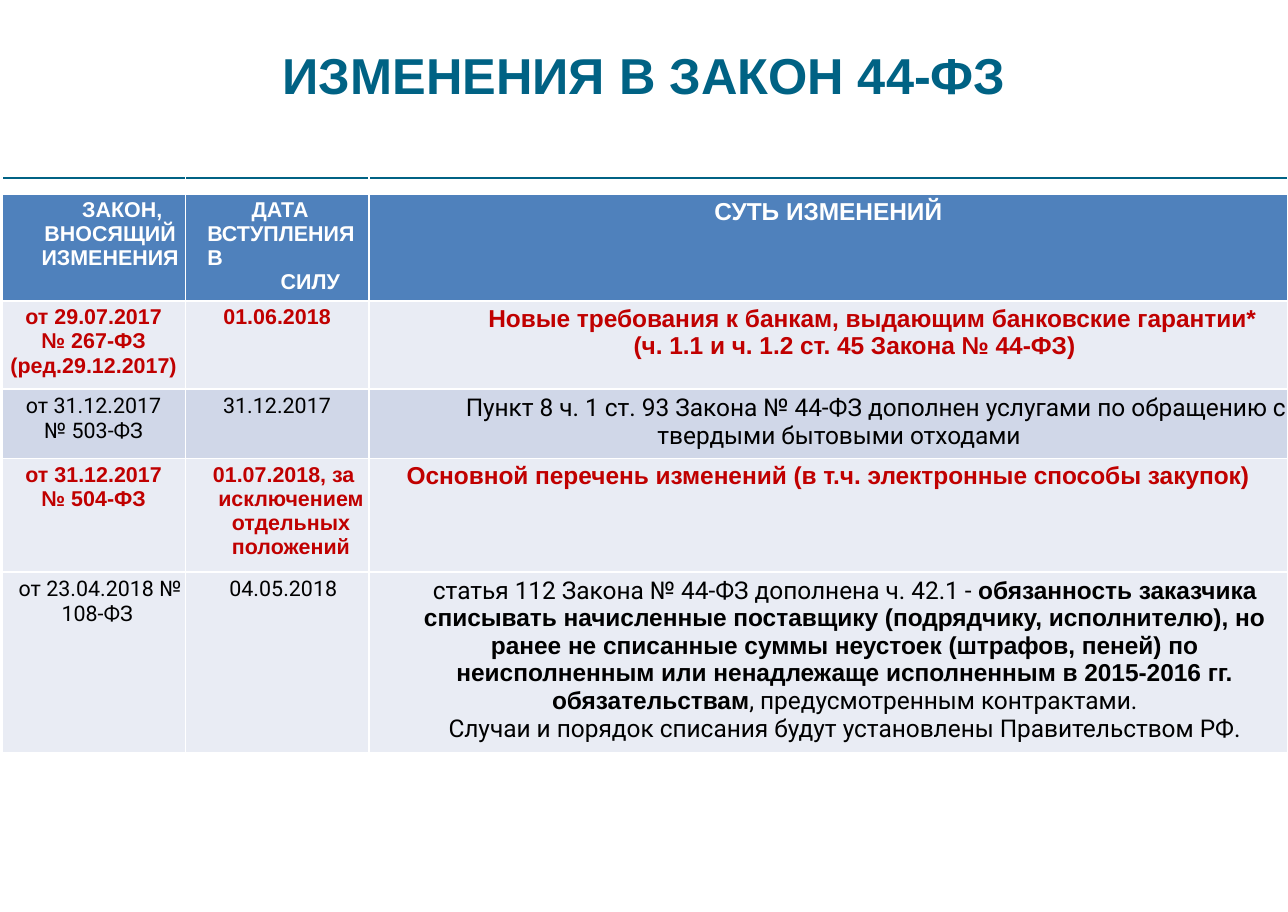
from dataclasses import dataclass

from lxml import etree
from pptx import Presentation
from pptx.dml.color import RGBColor
from pptx.enum.text import PP_ALIGN
from pptx.oxml.ns import qn
from pptx.util import Cm, Pt

CENTER, LEFT = PP_ALIGN.CENTER, PP_ALIGN.LEFT


@dataclass(frozen=True)
class Theme:
    accent: str = "006284"
    border: str = "FFFFFF"
    title_size: float = 33
    small_size: float = 14
    large_size: float = 16
    spacer_size: float = 6
    heading_font: str = "Arial"
    body_font: str = "Roboto"


THEME = Theme()

# Row styles: fill, text colour, bold
HEADER = ("4F81BC", "FFFFFF", True)
KEY = ("E9ECF4", "C00000", True)
SHADED = ("D0D7E8", "000000", False)
PLAIN = ("E9ECF4", "000000", False)

# Content: each cell is a list of (spans, alignment, left margin, first indent);
# a span is (text, bold), or plain text in the style of its row
TITLE = "ИЗМЕНЕНИЯ В ЗАКОН 44-ФЗ"


def centred(*lines, margin=0.0, indent=0.0):
    return [([line], CENTER, margin, indent) for line in lines]


def hanging(line, margin, indent=0.0):
    return [([line], LEFT, margin, indent)]


DUTY = [
    "статья 112 Закона № 44-ФЗ дополнена ч. 42.1 - ",
    ("обязанность заказчика списывать начисленные поставщику (подрядчику, "
     "исполнителю), но ранее не списанные суммы неустоек (штрафов, пеней) по "
     "неисполненным или ненадлежаще исполненным в 2015-2016 гг. обязательствам", True),
    ", предусмотренным контрактами.",
]

ROWS = [
    (2.08, HEADER, [
        centred("ЗАКОН, ВНОСЯЩИЙ ИЗМЕНЕНИЯ", margin=0.76, indent=0.56),
        hanging("ДАТА ВСТУПЛЕНИЯ В", 0.51, 1.02)
        + centred("СИЛУ", margin=0.51, indent=1.02),
        centred("СУТЬ ИЗМЕНЕНИЙ"),
    ]),
    (2.03, KEY, [
        centred("от 29.07.2017", "№ 267-ФЗ", "(ред.29.12.2017)"),
        centred("01.06.2018"),
        hanging("Новые требования к банкам, выдающим банковские гарантии* "
                "(ч. 1.1 и ч. 1.2 ст. 45 Закона № 44-ФЗ)", 6.1, -3.35),
    ]),
    (1.6, SHADED, [
        centred("от 31.12.2017", "№ 503-ФЗ"),
        centred("31.12.2017"),
        hanging("Пункт 8 ч. 1 ст. 93 Закона № 44-ФЗ дополнен услугами по обращению "
                "с твердыми бытовыми отходами", 6.65, -4.42),
    ]),
    (2.62, KEY, [
        centred("от 31.12.2017", "№ 504-ФЗ"),
        hanging("01.07.2018, за", 0.64)
        + centred("исключением отдельных положений", margin=0.64),
        centred("Основной перечень изменений (в т.ч. электронные способы закупок)"),
    ]),
    (3.63, PLAIN, [
        hanging("от 23.04.2018 № 108-ФЗ", 1.37, -0.99),
        hanging("04.05.2018", 1.02),
        [(DUTY, CENTER, 0.76, 0)]
        + centred("Случаи и порядок списания будут установлены Правительством РФ.",
                  margin=0.76),
    ]),
]
COLUMN_WIDTHS = [4.22, 4.24, 21.18]
COLUMN_SIZES = [THEME.small_size, THEME.small_size, THEME.large_size]
SPACER_HEIGHT = 0.36


def set_font(font, size, color, bold):
    font.size = Pt(size)
    font.color.rgb = RGBColor.from_string(color)
    font.bold = bold
    font.name = THEME.heading_font if bold else THEME.body_font


def set_border(cell, side, color, width):
    line = etree.SubElement(cell._tc.get_or_add_tcPr(), qn(f"a:ln{side}"), w=str(Pt(width)))
    fill = etree.SubElement(line, qn("a:solidFill"))
    etree.SubElement(fill, qn("a:srgbClr"), val=color)


def prepare_cell(cell, top_color=THEME.border, top_width=1):
    cell.margin_left = cell.margin_right = cell.margin_bottom = 0
    cell.margin_top = Cm(0.1)
    for side in "LRTB":
        is_top = side == "T"
        set_border(cell, side, top_color if is_top else THEME.border,
                   top_width if is_top else 1)


def fill_cell(cell, paragraphs, style, size):
    fill, color, row_bold = style
    prepare_cell(cell)
    cell.fill.solid()
    cell.fill.fore_color.rgb = RGBColor.from_string(fill)
    frame = cell.text_frame
    for index, (spans, alignment, margin, indent) in enumerate(paragraphs):
        para = frame.add_paragraph() if index else frame.paragraphs[0]
        para.alignment = alignment
        para.space_before = Pt(0 if index else 2.8)
        properties = para._p.get_or_add_pPr()
        properties.set("marL", str(Cm(margin)))
        properties.set("indent", str(Cm(indent)))
        if len(spans) == 1:
            set_font(para.font, size, color, row_bold)
        for item in spans:
            text, bold = (item, row_bold) if isinstance(item, str) else item
            span = para.add_run()
            span.text = text
            if len(spans) > 1:
                set_font(span.font, size, color, bold)


def add_title(page):
    box = page.shapes.add_textbox(Cm(6.48), Cm(0.99), Cm(16.76), Cm(1.47))
    frame = box.text_frame
    frame.word_wrap = True
    frame.margin_left = frame.margin_right = frame.margin_bottom = 0
    frame.margin_top = Cm(0.03)
    para = frame.paragraphs[0]
    para.text = TITLE
    para.alignment = CENTER
    para.space_before = Pt(1)
    set_font(para.font, THEME.title_size, THEME.accent, True)


def add_changes_table(page):
    heights = [SPACER_HEIGHT] + [height for height, _, _ in ROWS]
    table = page.shapes.add_table(
        len(heights), len(COLUMN_WIDTHS), Cm(0.05), Cm(4.11),
        Cm(sum(COLUMN_WIDTHS)), Cm(sum(heights))).table
    table.first_row = table.horz_banding = False
    for column, width in zip(table.columns, COLUMN_WIDTHS):
        column.width = Cm(width)
    for row, height in zip(table.rows, heights):
        row.height = Cm(height)

    # Thin spacer row that carries the rule under the title
    for cell in table.rows[0].cells:
        prepare_cell(cell, THEME.accent, 1.5)
        cell.margin_top = 0
        cell.fill.background()
        etree.SubElement(cell.text_frame.paragraphs[0]._p, qn("a:endParaRPr"),
                         sz=str(int(THEME.spacer_size * 100)))

    # Header and body rows
    for row_index, (_, style, cells) in enumerate(ROWS, start=1):
        for column_index, paragraphs in enumerate(cells):
            fill_cell(table.cell(row_index, column_index), paragraphs, style,
                      COLUMN_SIZES[column_index])


def main():
    deck = Presentation()
    deck.slide_width, deck.slide_height = Cm(29.7), Cm(21.03)
    page = deck.slides.add_slide(deck.slide_layouts[6])
    add_title(page)
    add_changes_table(page)
    deck.save("out.pptx")


if __name__ == "__main__":
    main()
